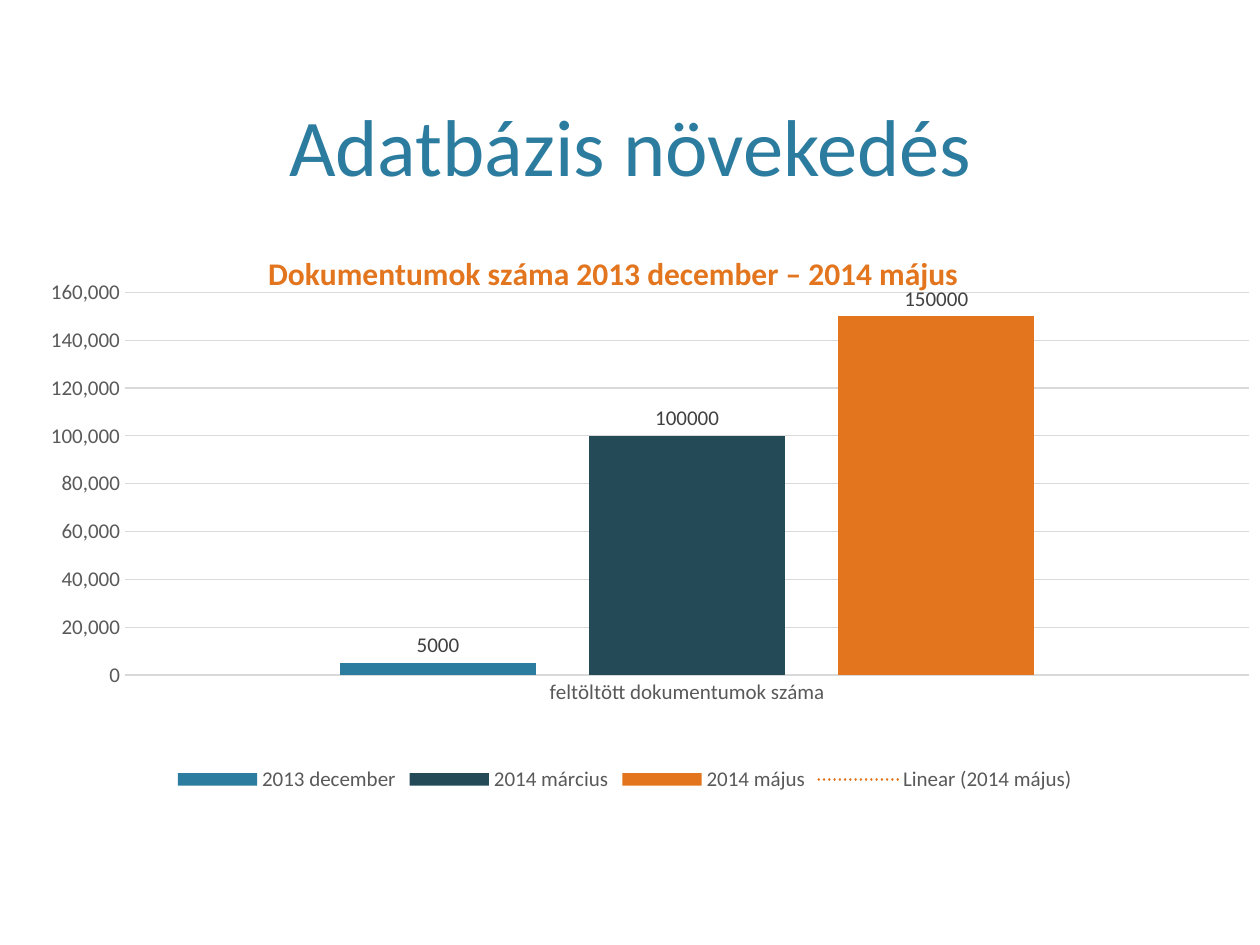
from lxml.etree import fromstring
from pptx import Presentation
from pptx.chart.data import CategoryChartData
from pptx.dml.color import RGBColor
from pptx.enum.chart import XL_CHART_TYPE, XL_LABEL_POSITION, XL_LEGEND_POSITION, XL_TICK_MARK
from pptx.enum.text import MSO_ANCHOR, PP_ALIGN
from pptx.oxml.ns import nsdecls, qn
from pptx.util import Pt

PX = 914400 // 126
FONT = "Calibri"
BLUE = RGBColor(0x2C, 0x7C, 0x9F)
DARK = RGBColor(0x24, 0x4A, 0x58)
ORANGE = RGBColor(0xE2, 0x75, 0x1D)
AXIS_TEXT = RGBColor(0x59, 0x59, 0x59)
LABEL_TEXT = RGBColor(0x40, 0x40, 0x40)
GRID = RGBColor(0xD9, 0xD9, 0xD9)

# Content
HEADING = "Adatbázis növekedés"
CHART_TITLE = "Dokumentumok száma 2013 december – 2014 május"
CATEGORY = "feltöltött dokumentumok száma"
SERIES = [
    ("2013 december", 5000, BLUE),
    ("2014 március", 100000, DARK),
    ("2014 május", 150000, ORANGE),
]
HEADING_BOX = (76, 15, 1108, 184)
CHART_BOX = (0, 217, 1250, 580)


def px(*lengths):
    return [length * PX for length in lengths]


def style_font(font, size, color, bold=False):
    font.name = FONT
    font.size = Pt(size)
    font.bold = bold
    font.color.rgb = color


def style_line(line, color):
    line.color.rgb = color
    line.width = Pt(0.75)


def place(element, index, inner=False, **fractions):
    """Set a manual layout, in fractions of the chart."""
    for old in element.findall(qn("c:layout")):
        element.remove(old)
    target = '<c:layoutTarget val="inner"/>' if inner else ""
    modes = "".join(f'<c:{key}Mode val="edge"/>' for key in "xy")
    values = "".join(f'<c:{key} val="{value}"/>' for key, value in fractions.items())
    element.insert(index, fromstring(
        f'<c:layout {nsdecls("c")}><c:manualLayout>{target}{modes}{values}'
        '</c:manualLayout></c:layout>'))


def add_trendline(series, color):
    trendline = fromstring(
        f'<c:trendline {nsdecls("c", "a")}><c:spPr><a:ln w="{Pt(1.5)}" cap="rnd">'
        f'<a:solidFill><a:srgbClr val="{color}"/></a:solidFill>'
        '<a:prstDash val="sysDot"/></a:ln></c:spPr>'
        '<c:trendlineType val="linear"/><c:dispRSqr val="0"/><c:dispEq val="0"/>'
        '</c:trendline>')
    series._element.find(qn("c:cat")).addprevious(trendline)


def add_heading(slide):
    frame = slide.shapes.add_textbox(*px(*HEADING_BOX)).text_frame
    frame.word_wrap = True
    frame.vertical_anchor = MSO_ANCHOR.BOTTOM
    paragraph = frame.paragraphs[0]
    paragraph.text = HEADING
    paragraph.alignment = PP_ALIGN.CENTER
    style_font(paragraph.font, 46, BLUE)


def add_growth_chart(slide):
    data = CategoryChartData()
    data.categories = [CATEGORY]
    for name, value, _ in SERIES:
        data.add_series(name, [value])
    chart = slide.shapes.add_chart(
        XL_CHART_TYPE.COLUMN_CLUSTERED, *px(*CHART_BOX), data).chart
    style_font(chart.font, 12, AXIS_TEXT)

    # Chart title
    chart.has_title = True
    paragraph = chart.chart_title.text_frame.paragraphs[0]
    paragraph.text = CHART_TITLE
    style_font(paragraph.font, 18, ORANGE, bold=True)
    place(chart.chart_title._element, 1, x=0.21, y=0.05)

    # Columns, value labels and trend
    plot = chart.plots[0]
    plot.gap_width = 219
    plot.overlap = -27
    plot.vary_by_categories = False
    for series, (_, _, color) in zip(plot.series, SERIES):
        series.format.fill.solid()
        series.format.fill.fore_color.rgb = color
        labels = series.data_labels
        labels.show_value = True
        labels.position = XL_LABEL_POSITION.OUTSIDE_END
        style_font(labels.font, 12, LABEL_TEXT)
    add_trendline(plot.series[-1], ORANGE)
    place(chart._chartSpace.chart.plotArea, 0, inner=True, x=0.1, y=0.13, w=0.9, h=0.66)

    # Axes
    for axis in (chart.category_axis, chart.value_axis):
        axis.major_tick_mark = axis.minor_tick_mark = XL_TICK_MARK.NONE
        style_font(axis.tick_labels.font, 12, AXIS_TEXT)
    style_line(chart.category_axis.format.line, GRID)
    values = chart.value_axis
    values.minimum_scale, values.maximum_scale, values.major_unit = 0, 160000, 20000
    values.format.line.fill.background()
    style_line(values.major_gridlines.format.line, GRID)
    values.tick_labels.number_format = "#,##0"
    values.tick_labels.number_format_is_linked = False

    # Legend
    chart.has_legend = True
    chart.legend.position = XL_LEGEND_POSITION.BOTTOM
    chart.legend.include_in_layout = False
    style_font(chart.legend.font, 12, AXIS_TEXT)


def main():
    presentation = Presentation()
    presentation.slide_width, presentation.slide_height = px(1260, 945)
    slide = presentation.slides.add_slide(presentation.slide_layouts[6])
    add_heading(slide)
    add_growth_chart(slide)
    presentation.save("out.pptx")


if __name__ == "__main__":
    main()
